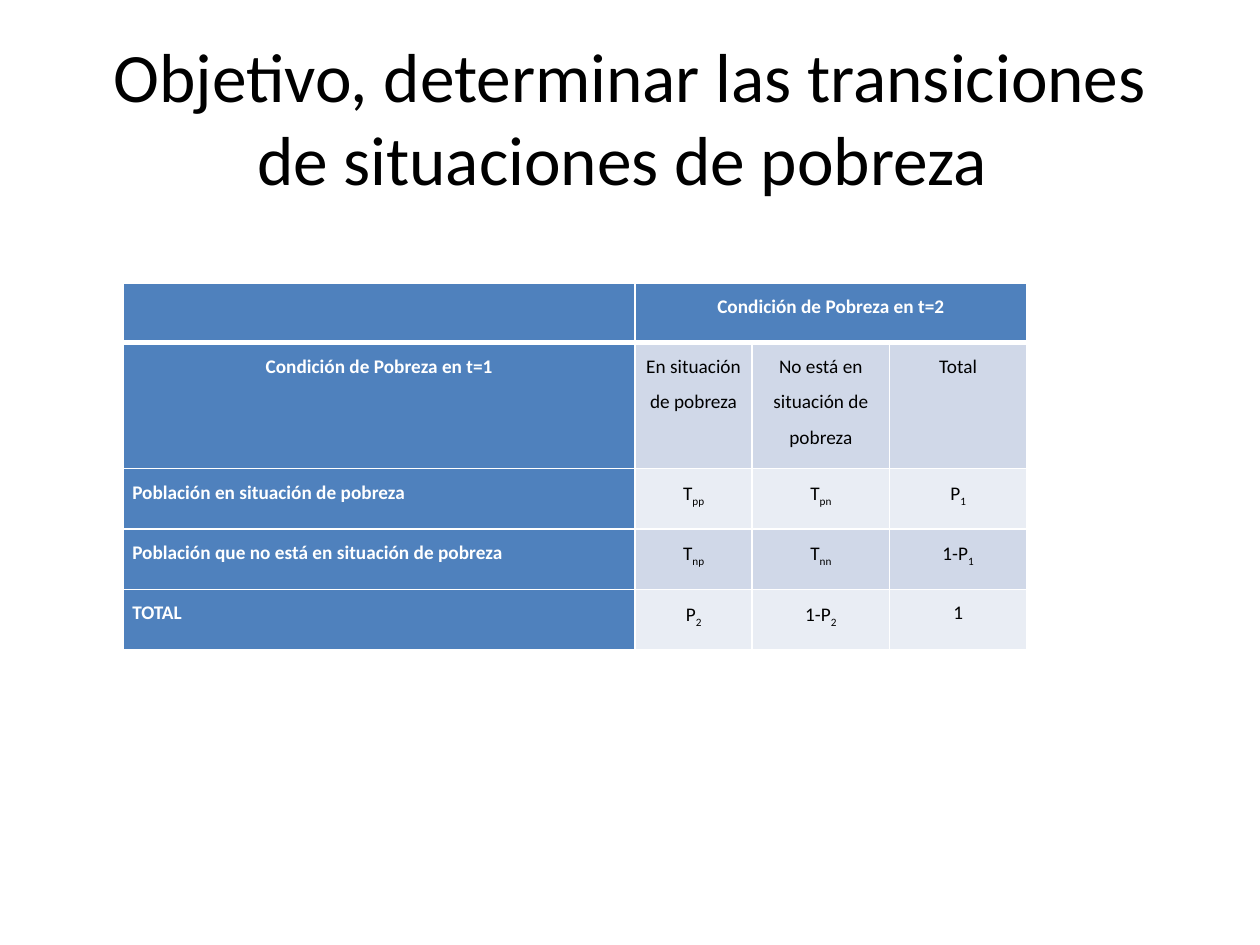
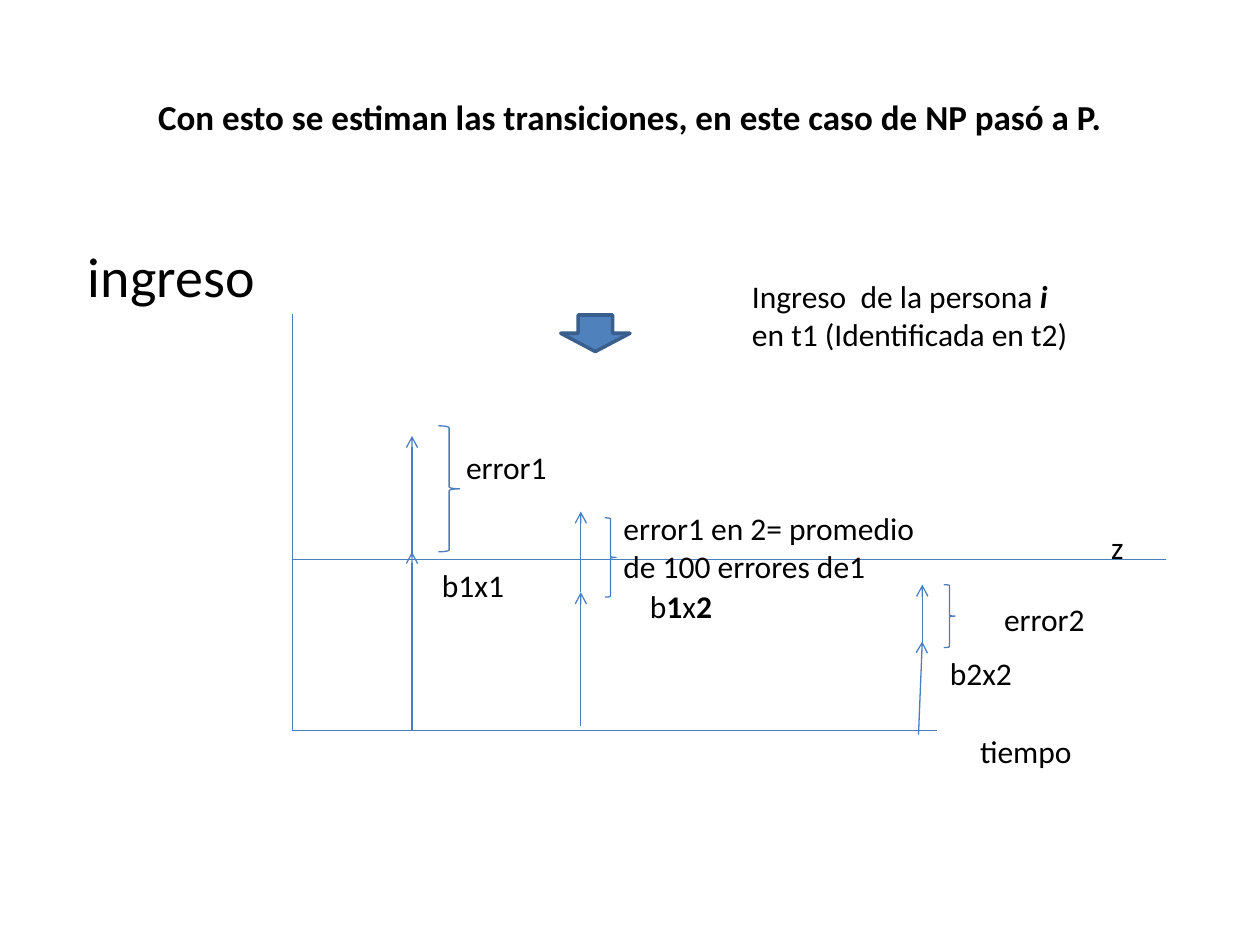
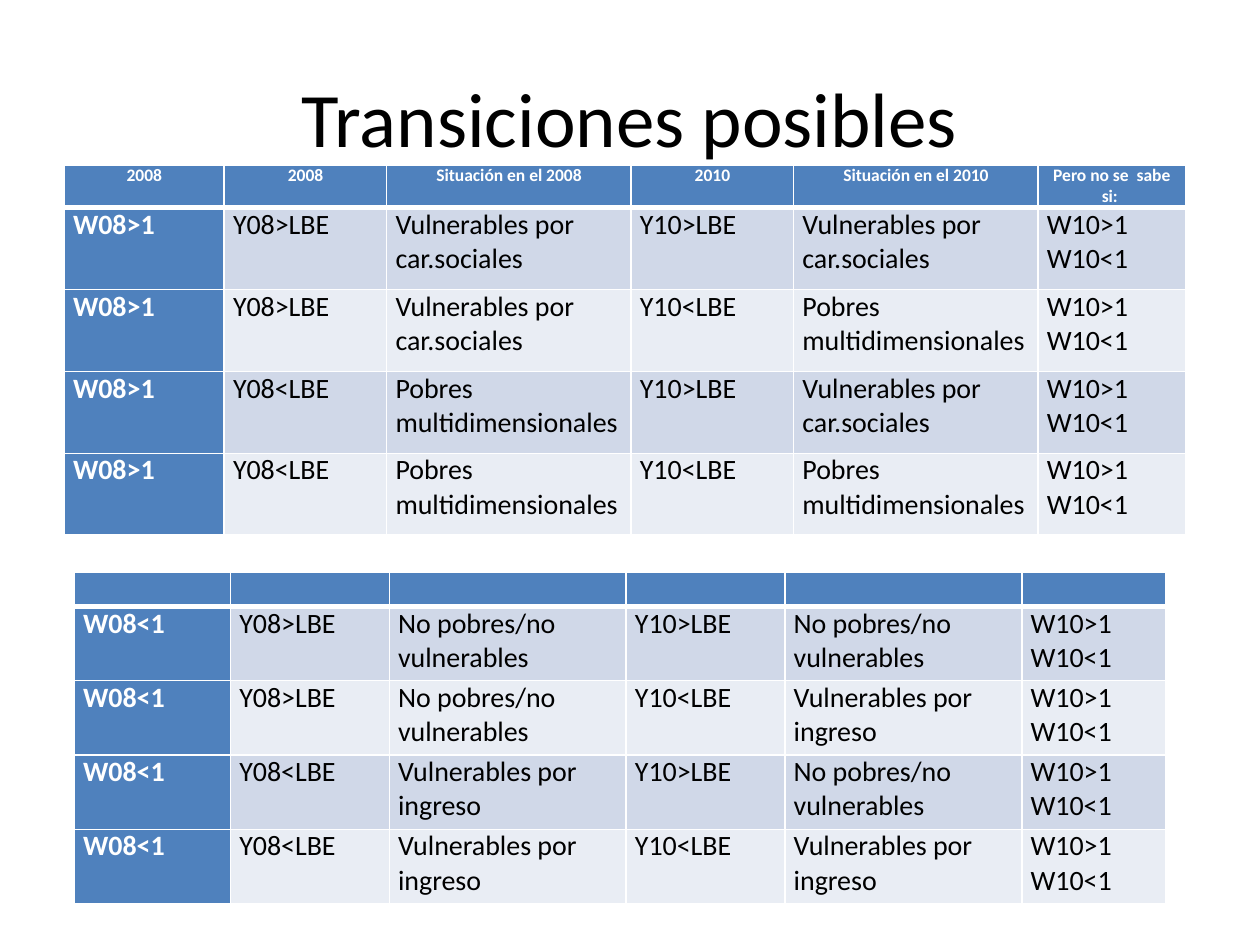
from dataclasses import dataclass
from itertools import product

from lxml.etree import SubElement
from pptx import Presentation
from pptx.dml.color import RGBColor
from pptx.enum.shapes import MSO_CONNECTOR, MSO_SHAPE
from pptx.enum.text import MSO_ANCHOR, MSO_AUTO_SIZE, PP_ALIGN
from pptx.oxml.ns import qn
from pptx.util import Pt

SCALE = 9144
STRAIGHT = MSO_CONNECTOR.STRAIGHT
BRACE, DOWN_ARROW = MSO_SHAPE.RIGHT_BRACE, MSO_SHAPE.DOWN_ARROW
LEFT, CENTER = PP_ALIGN.LEFT, PP_ALIGN.CENTER
MIDDLE = MSO_ANCHOR.MIDDLE
NO_FIT, GROW = MSO_AUTO_SIZE.NONE, MSO_AUTO_SIZE.SHAPE_TO_FIT_TEXT
TITLE_ONLY = 5
TITLE_BOX = (50, 30, 900, 125)


@dataclass(frozen=True)
class Theme:
    """Colours, font and type sizes of the deck."""

    font: str = "Calibri"
    ink: str = "000000"
    paper: str = "FFFFFF"
    accent: str = "4F81BD"
    stroke: str = "4B7EBC"
    arrow_edge: str = "3A5F8C"
    bands: tuple = ("D0D8E8", "E9EDF4")
    title: float = 44
    long_title: float = 39.6
    note_title: float = 20
    axis: float = 32
    label: float = 18
    body: float = 16
    small: float = 11
    tiny: float = 10
    thin: float = 0.75
    edge: float = 2
    rule: float = 1
    header_rule: float = 3


THEME = Theme()


def px(*lengths):
    """Turn px into EMU."""
    return [length * SCALE for length in lengths]


def set_all(target, values):
    """Set each attribute of the target from a dict."""
    for name, value in values.items():
        setattr(target, name, value)


def write(frame, paras, size, color=THEME.ink, bold=False, align=LEFT, spacing=None):
    """Write paragraphs, each a string or a list of (text, format) spans."""
    for index, spans in enumerate(paras):
        para = frame.paragraphs[0] if index == 0 else frame.add_paragraph()
        set_all(para, {"alignment": align, "line_spacing": spacing})
        for text, extra in [(spans, {})] if isinstance(spans, str) else spans:
            span = para.add_run()
            span.text = text
            span.font.color.rgb = RGBColor.from_string(color)
            set_all(span.font, {"name": THEME.font, "size": Pt(size), "bold": bold, **extra})


def add_page(deck, title, size, bold=False):
    """Add a slide with its formatted title."""
    page = deck.slides.add_slide(deck.slide_layouts[TITLE_ONLY])
    box = page.shapes.title
    set_all(box, dict(zip(("left", "top", "width", "height"), px(*TITLE_BOX))))
    set_all(box.text_frame, {"auto_size": NO_FIT, "word_wrap": True, "vertical_anchor": MIDDLE})
    write(box.text_frame, [title], size, bold=bold, align=CENTER)
    return page


def add_label(page, box, paras, size=THEME.label, wrap=False, fit=GROW):
    """Add a text box."""
    frame = page.shapes.add_textbox(*px(*box)).text_frame
    set_all(frame, {"word_wrap": wrap, "auto_size": fit})
    write(frame, paras, size)


def add_line(page, start, end, arrow=False):
    """Add a thin straight line, with an open arrowhead at its end if asked."""
    line = page.shapes.add_connector(STRAIGHT, *px(*start, *end))
    line.line.color.rgb = RGBColor.from_string(THEME.stroke)
    line.line.width = Pt(THEME.thin)
    if arrow:
        SubElement(line.line._get_or_add_ln(), qn("a:tailEnd"), type="arrow")
    SubElement(line._element.spPr, qn("a:effectLst"))


def add_figure(page, kind, box, stroke, width, fill=None):
    """Add a preset shape without shadow."""
    shape = page.shapes.add_shape(kind, *px(*box))
    shape.shadow.inherit = False
    shape.line.color.rgb = RGBColor.from_string(stroke)
    shape.line.width = Pt(width)
    if fill:
        shape.fill.solid()
        shape.fill.fore_color.rgb = RGBColor.from_string(fill)
    else:
        shape.fill.background()


def format_cell(cell, row, fill):
    """Set the white borders, margins and fill of a cell."""
    heavy = {"lnT": row == 1, "lnB": row == 0}
    for side in ("lnL", "lnR", "lnT", "lnB"):
        width = THEME.header_rule if heavy.get(side) else THEME.rule
        border = SubElement(cell._tc.get_or_add_tcPr(), qn(f"a:{side}"), w=str(Pt(width)))
        SubElement(SubElement(border, qn("a:solidFill")), qn("a:srgbClr"), val=THEME.paper)
    side_margin, = px(7)
    set_all(cell, {"margin_left": side_margin, "margin_right": side_margin,
                   "margin_top": 0, "margin_bottom": 0})
    cell.fill.solid()
    cell.fill.fore_color.rgb = RGBColor.from_string(fill)


def add_grid(page, origin, widths, heights, rows, size, header_size, centered, spacing=None):
    """Add a banded table whose centered(row, column) rule picks the alignment."""
    box = px(*origin, sum(widths), sum(heights))
    table = page.shapes.add_table(len(heights), len(widths), *box).table
    set_all(table, {"first_row": False, "horz_banding": False})
    for column, width in zip(table.columns, px(*widths)):
        column.width = width
    for line, height in zip(table.rows, px(*heights)):
        line.height = height
    for row, texts in enumerate(rows):
        for column, paras in enumerate(texts):
            strong = row == 0 or column == 0
            cell = table.cell(row, column)
            format_cell(cell, row, THEME.accent if strong else THEME.bands[(row - 1) % 2])
            text_size = size if row else header_size
            if paras:
                write(cell.text_frame, paras, text_size, THEME.paper if strong else THEME.ink,
                      strong, CENTER if centered(row, column) else LEFT, spacing)
            else:
                SubElement(cell.text_frame.paragraphs[0]._p, qn("a:endParaRPr"),
                           sz=str(text_size * 100))
    return table


def symbol(base, index):
    """Return one paragraph with a subscript."""
    return [[(base, {}), (index, {"_baseline": True})]]


def lower_subscripts(table):
    """Lower the last span of each cell that holds a symbol."""
    for cell in table.iter_cells():
        spans = cell.text_frame.paragraphs[0].runs
        if len(spans) > 1:
            spans[-1]._r.get_or_add_rPr().set("baseline", "-25000")


def build_objective(deck):
    """Build the slide with the transition matrix."""
    page = add_page(deck, "Objetivo, determinar las transiciones de situaciones de pobreza ",
                    THEME.long_title)
    rows = [
        [[], ["Condición de Pobreza en t=2"], [], []],
        [["Condición de Pobreza en t=1"], ["En situación de pobreza"],
         ["No está en situación de pobreza"], ["Total"]],
        [["Población en situación de pobreza"],
         symbol("T", "pp"), symbol("T", "pn"), symbol("P", "1")],
        [["Población que no está en situación de pobreza"],
         symbol("T", "np"), symbol("T", "nn"), symbol("1-P", "1")],
        [["TOTAL"], symbol("P", "2"), symbol("1-P", "2"), ["1"]],
    ]
    table = add_grid(page, (98, 225), (406, 93, 109, 109), (47, 100, 48, 48, 48), rows,
                     THEME.small, THEME.small, lambda row, column: row < 2 or column > 0, 1.5)
    table.cell(0, 1).merge(table.cell(0, 3))
    lower_subscripts(table)


def draw_income_chart(page, left, top):
    """Draw the income diagram from the top of its vertical axis."""
    def at(x, y, *size):
        return (left + x, top + y, *size)

    add_line(page, at(0, 0), at(0, 331))
    add_line(page, at(0, 331), at(512, 331))
    arrows = [((95, 331), (95, 189)), ((500, 263), (500, 215)), ((497, 334), (500, 260)),
              ((229, 221), (229, 157)), ((229, 327), (229, 221)), ((95, 192), (95, 97))]
    for start, end in arrows:
        add_line(page, at(*start), at(*end), arrow=True)
    for brace in ((116, 89, 17, 100), (517, 215, 9, 50), (248, 162, 9, 63)):
        add_figure(page, BRACE, at(*brace), THEME.stroke, THEME.thin)
    add_figure(page, DOWN_ARROW, at(213, 1, 55, 29), THEME.arrow_edge, THEME.edge, THEME.accent)
    add_line(page, at(0, 195), at(693, 195))
    strong = {"bold": True}
    labels = [
        ((274, 212, 70, 40), [[("b", {}), ("1", strong), ("x", {}), ("2", strong)]]),
        ((536, 327, 94, 40), ["tiempo"]),
        ((128, 102, 85, 40), ["error1"]),
        ((555, 222, 85, 40), ["error2"]),
        ((109, 195, 70, 40), ["b1x1"]),
        ((253, 150, 254, 71), ["error1 en 2= promedio", "de 100 errores de1"]),
        ((512, 265, 70, 40), ["b2x2"]),
        ((355, -34, 274, 71), [[("Ingreso  de la persona ", {}), ("i", {**strong, "italic": True})],
                               "en t1 (Identificada en t2)"]),
    ]
    for box, paras in labels:
        add_label(page, at(*box), paras)
    add_label(page, at(640, 165, 51, 40), ["z"], wrap=True)


def build_estimate(deck):
    """Build the slide with the income diagram."""
    page = add_page(deck, "Con esto se estiman las transiciones, en este caso de NP pasó a P.",
                    THEME.note_title, bold=True)
    add_label(page, (60, 187, 900, 468), ["ingreso"], THEME.axis, wrap=True, fit=NO_FIT)
    draw_income_chart(page, 232, 249)


def transition_rows(sign, states):
    """List every pair of 2008 and 2010 situations for one deprivation sign."""
    cases = list(zip("><", states))
    return [[[f"W08{sign}1"], [f"Y08{before}LBE"], [old], [f"Y10{after}LBE"], [new],
             ["W10>1", "W10<1"]]
            for (before, old), (after, new) in product(cases, repeat=2)]


def build_transitions(deck):
    """Build the slide with the two tables of possible transitions."""
    page = add_page(deck, "Transiciones posibles", THEME.title)
    header = [["2008"], ["2008"], ["Situación en el 2008"], ["2010"], ["Situación en el 2010"],
              ["Pero no se  sabe si: "]]
    deprived = transition_rows(">", ("Vulnerables por car.sociales", "Pobres multidimensionales"))
    covered = transition_rows("<", ("No pobres/no vulnerables", "Vulnerables por ingreso"))
    tables = [
        ((51, 131), (127, 129, 194, 129, 194, 117), (32, *[65] * 4), [header, *deprived],
         THEME.tiny),
        ((59, 454), (124, 126, 188, 126, 188, 114), (26, *[59] * 4), [[[]] * 6, *covered],
         THEME.body),
    ]
    for origin, widths, heights, rows, header_size in tables:
        add_grid(page, origin, widths, heights, rows, THEME.body, header_size,
                 lambda row, column: row == 0)


def main():
    """Build and save the deck."""
    deck = Presentation()
    deck.slide_width, deck.slide_height = px(1000, 750)
    for build in (build_objective, build_estimate, build_transitions):
        build(deck)
    deck.save("out.pptx")


if __name__ == "__main__":
    main()
